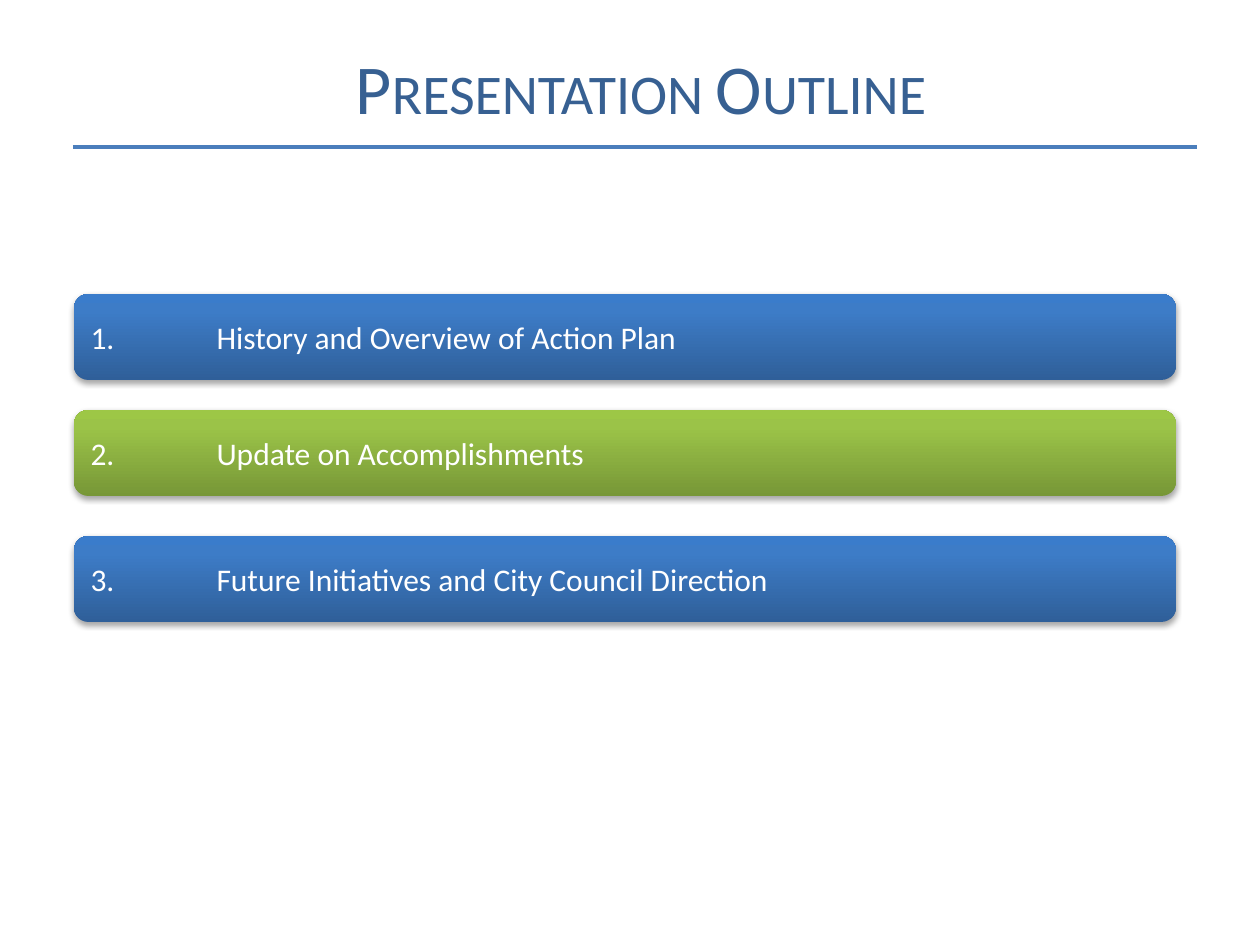
from dataclasses import dataclass

from lxml import etree
from pptx import Presentation
from pptx import util as u
from pptx.dml.color import RGBColor
from pptx.enum import shapes, text
from pptx.oxml import parse_xml
from pptx.oxml.ns import nsdecls, qn

PX = u.Inches(1) // 126
FONT = "Calibri"
BLUE = ((0, "2F5F99"), (80, "3D7CC7"), (100, "3A7CCB"))
GREEN = ((0, "779737"), (80, "9BC348"), (100, "9DC746"))


@dataclass
class Bar:
    label: str
    top: int
    stops: tuple


BARS = [
    Bar("1.\tHistory and Overview of Action Plan", 294, BLUE),
    Bar("2.\tUpdate on Accomplishments", 410, GREEN),
    Bar("3.\tFuture Initiatives and City Council Direction", 536, BLUE),
]


def px(n: int) -> u.Emu:
    return u.Emu(n * PX)


def rgb(value: str) -> RGBColor:
    return RGBColor.from_string(value)


def write(tf, words: str, size: int, color: str, align):
    tf.word_wrap = True
    tf.vertical_anchor = text.MSO_ANCHOR.MIDDLE
    p = tf.paragraphs[0]
    p.text = words
    p.alignment = align
    r = p.runs[0]
    r.font.name = FONT
    r.font.size = u.Pt(size)
    r.font.color.rgb = rgb(color)
    return p


def add_title(s) -> None:
    sp = s.shapes.add_textbox(px(74), px(22), px(1134), px(130))
    p = write(sp.text_frame, "Presentation Outline", 40, "376092", text.PP_ALIGN.CENTER)
    p.runs[0].font._element.set("cap", "small")


def add_rule(s) -> None:
    sp = s.shapes.add_connector(
        shapes.MSO_CONNECTOR.STRAIGHT, px(73), px(147), px(1197), px(147))
    sp.line.color.rgb = rgb("4B7EBC")
    sp.line.width = u.Pt(1.75)
    etree.SubElement(sp._element.spPr, qn("a:effectLst"))


def add_gradient(sp, stops: tuple) -> None:
    sp.fill.gradient()
    sp.fill.gradient_angle = 90
    gs_lst = sp._element.spPr.find(qn("a:gradFill")).find(qn("a:gsLst"))
    for gs in list(gs_lst):
        gs_lst.remove(gs)
    for pos, color in stops:
        gs_lst.append(parse_xml(
            f'<a:gs {nsdecls("a")} pos="{pos * 1000}"><a:srgbClr val="{color}"/></a:gs>'))


def add_shadow(sp) -> None:
    sp.shadow.inherit = False
    sp._element.spPr.find(qn("a:effectLst")).append(parse_xml(
        f'<a:outerShdw {nsdecls("a")} blurRad="{u.Pt(3.1)}" dist="{u.Pt(1.8)}" '
        'dir="5400000" rotWithShape="0"><a:srgbClr val="000000">'
        '<a:alpha val="35000"/></a:srgbClr></a:outerShdw>'))


def add_tab(p, pos: int) -> None:
    p._p.get_or_add_pPr().append(parse_xml(
        f'<a:tabLst {nsdecls("a")}><a:tab pos="{px(pos)}" algn="l"/></a:tabLst>'))


def add_bar(s, bar: Bar) -> None:
    sp = s.shapes.add_shape(
        shapes.MSO_SHAPE.ROUNDED_RECTANGLE, px(74), px(bar.top), px(1102), px(86))
    add_gradient(sp, bar.stops)
    sp.line.fill.background()
    add_shadow(sp)
    p = write(sp.text_frame, bar.label, 18, "FFFFFF", text.PP_ALIGN.LEFT)
    add_tab(p, 126)


def main() -> None:
    prs = Presentation()
    prs.slide_width, prs.slide_height = px(1260), px(945)
    s = prs.slides.add_slide(prs.slide_layouts[6])
    add_title(s)
    add_rule(s)
    for bar in BARS:
        add_bar(s, bar)
    prs.save("out.pptx")


if __name__ == "__main__":
    main()
